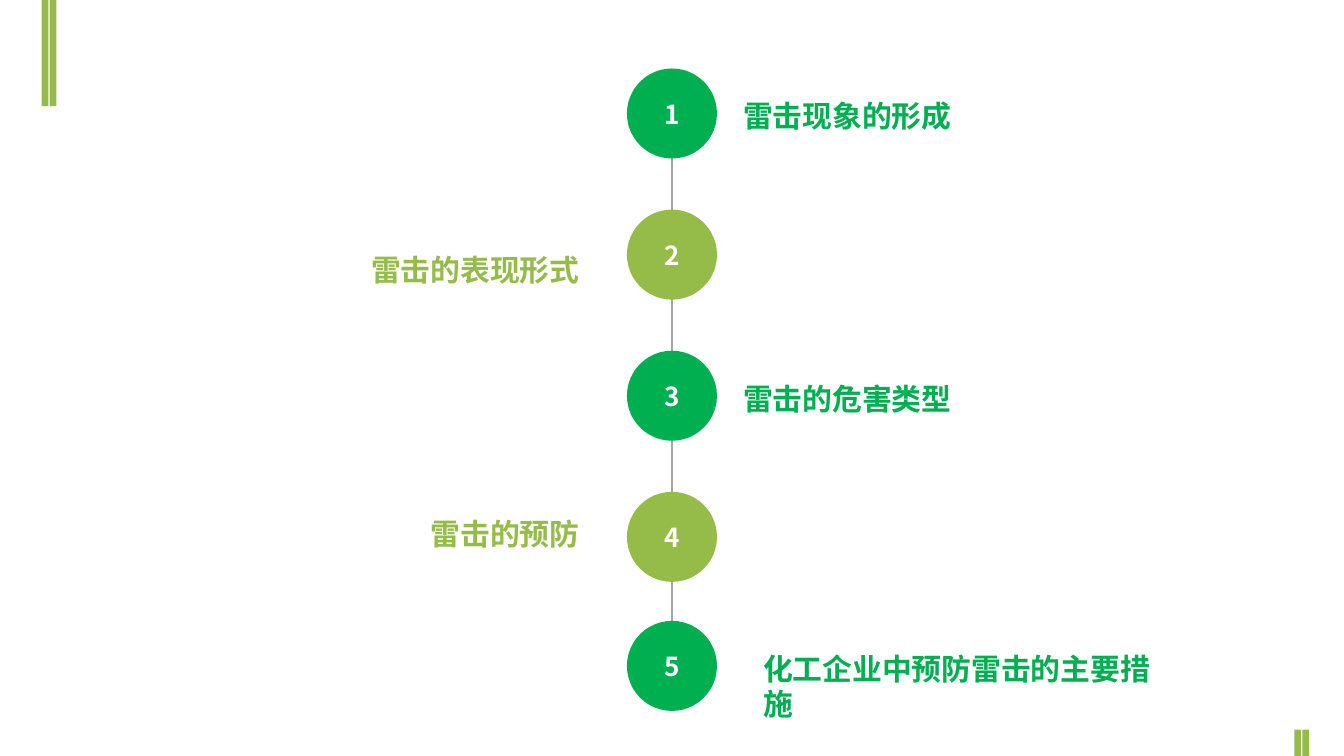
from lxml.etree import SubElement
from pptx import Presentation
from pptx.dml.color import RGBColor
from pptx.enum.shapes import MSO_CONNECTOR as CONN, MSO_SHAPE as SHAPE
from pptx.enum.text import MSO_AUTO_SIZE as AUTO, PP_ALIGN as ALIGN
from pptx.oxml.ns import qn
from pptx.util import Inches, Pt

GREEN = RGBColor(0x00, 0xB0, 0x50)
LIME = RGBColor(0x95, 0xBC, 0x49)
GREY = RGBColor(0xA6, 0xA6, 0xA6)
WHITE = RGBColor(0xFF, 0xFF, 0xFF)
CJK_FONT = "Noto Sans CJK SC"
LATIN_FONT = "Times New Roman"
CENTER_X = 5
DIAMETER = 0.67
LABEL_WIDTH = 3.19

STEPS = [
    (0.51, GREEN, "雷击现象的形成", 5.43, 0.68, 0.37, ALIGN.LEFT),
    (1.56, LIME, "雷击的表现形式", 1.22, 1.82, 0.37, ALIGN.RIGHT),
    (2.61, GREEN, "雷击的危害类型", 5.43, 2.78, 0.37, ALIGN.LEFT),
    (3.66, LIME, "雷击的预防", 1.22, 3.79, 0.37, ALIGN.RIGHT),
    (4.62, GREEN, "化工企业中预防雷击的主要措施", 5.58, 4.79, 0.64, ALIGN.LEFT),
]


def add_filled(shapes, kind, x, y, w, h, color):
    """Add a flat shape without outline."""
    sp = shapes.add_shape(kind, Inches(x), Inches(y), Inches(w), Inches(h))
    sp.shadow.inherit = False
    sp.fill.solid()
    sp.fill.fore_color.rgb = color
    sp.line.fill.background()


def add_text(shapes, text, x, y, w, h, font, size, color, align, wrap=True):
    """Add a text box with one bold paragraph."""
    tf = shapes.add_textbox(Inches(x), Inches(y), Inches(w), Inches(h)).text_frame
    tf.word_wrap = wrap
    tf.auto_size = AUTO.SHAPE_TO_FIT_TEXT
    tf.text = text
    p = tf.paragraphs[0]
    p.alignment = align
    r = p.runs[0]
    r.font.name, r.font.size, r.font.bold = font, Pt(size), True
    r.font.color.rgb = color
    SubElement(r.font._element, qn("a:ea"), typeface=CJK_FONT)


def add_bars(s, x, y, h):
    """Add a pair of decorative corner bars."""
    shapes = s.shapes.add_group_shape().shapes
    for left in (x, x + 0.06):
        add_filled(shapes, SHAPE.RECTANGLE, left, y, 0.05, h, LIME)


def add_spine(s, top, bottom):
    """Add the vertical line behind the circles."""
    x = Inches(CENTER_X)
    line = s.shapes.add_connector(CONN.STRAIGHT, x, Inches(top), x, Inches(bottom))
    line.line.color.rgb = GREY
    line.line.width = Pt(0.75)
    SubElement(line._element.spPr, qn("a:effectLst"))


def add_circle(s, number, y, color):
    """Add a numbered circle on the spine."""
    shapes = s.shapes.add_group_shape().shapes
    x = CENTER_X - DIAMETER / 2
    add_filled(shapes, SHAPE.OVAL, x, y, DIAMETER, DIAMETER, color)
    add_text(shapes, str(number), CENTER_X - 0.16, y + 0.17, 0.32, 0.34,
             CJK_FONT, 14, WHITE, ALIGN.CENTER, wrap=False)


def main():
    """Build the contents slide and save it."""
    prs = Presentation()
    prs.slide_width = Inches(10)
    prs.slide_height = prs.slide_width * 9 // 16
    s = prs.slides.add_slide(prs.slide_layouts[6])
    add_bars(s, 0.31, 0, 0.79)
    add_bars(s, 9.63, 5.43, 0.2)
    add_spine(s, 0.9, STEPS[-1][0])
    for number, (top, color, text, x, y, h, align) in enumerate(STEPS, 1):
        add_circle(s, number, top, color)
        add_text(s.shapes, text, x, y, LABEL_WIDTH, h, LATIN_FONT, 16, color, align)
    prs.save("out.pptx")


if __name__ == "__main__":
    main()
